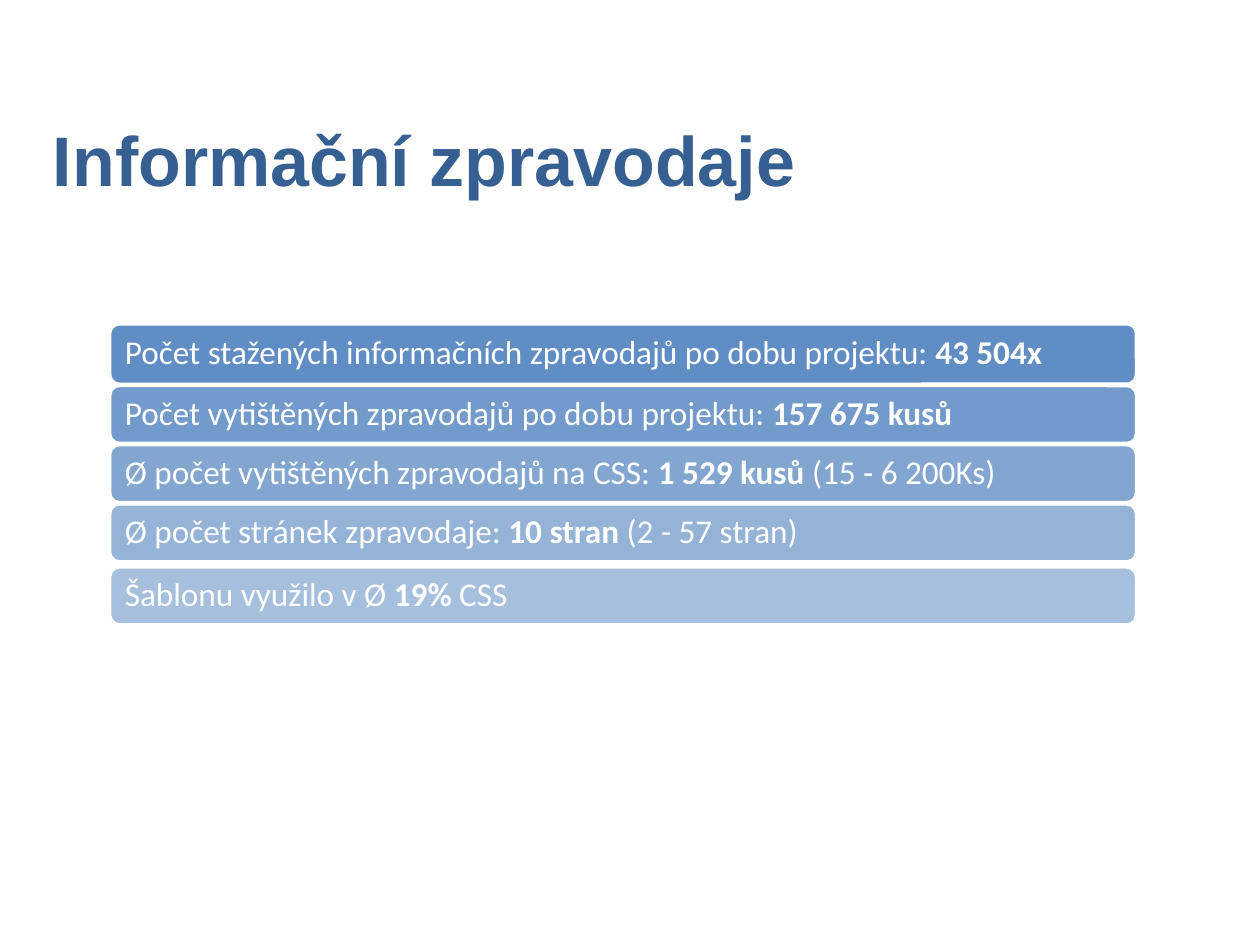
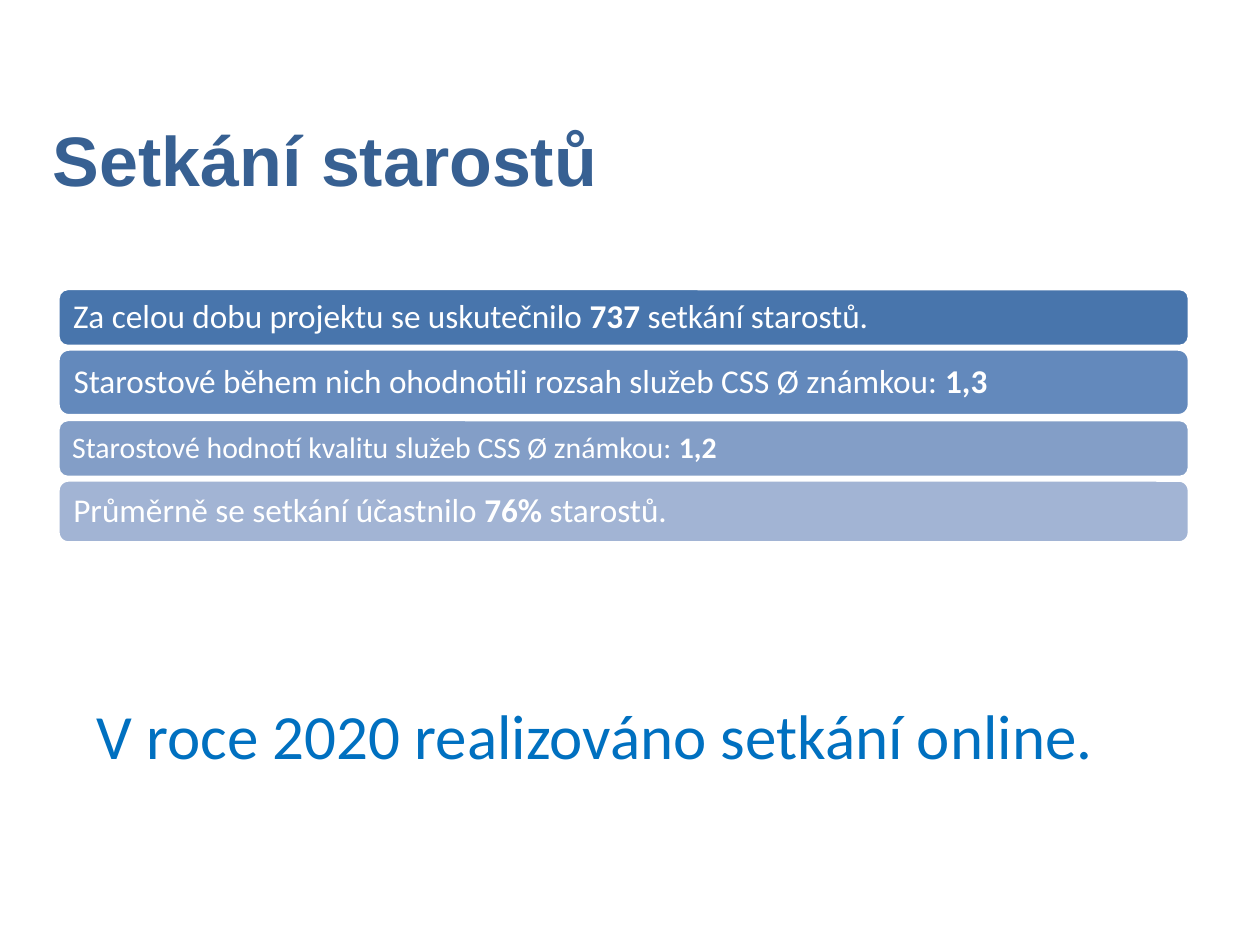
from lxml.etree import SubElement
from pptx import Presentation
from pptx.dml.color import RGBColor
from pptx.enum.shapes import MSO_SHAPE as Shape
from pptx.enum.text import MSO_ANCHOR as Anchor, MSO_AUTO_SIZE as AutoSize, PP_ALIGN as Align
from pptx.oxml.ns import qn
from pptx.util import Emu, Pt

EMU_PER_PX = 9144  # 100 px to the inch
TITLE_ONLY = 5

WHITE = RGBColor(0xFF, 0xFF, 0xFF)
TITLE_BLUE = RGBColor(0x37, 0x60, 0x92)
NOTE_BLUE = RGBColor(0x00, 0x70, 0xC0)
BAR_BLUE = RGBColor(0x4F, 0x81, 0xBD)
MEETING_BLUES = [
    RGBColor(0x48, 0x75, 0xAC),
    RGBColor(0x63, 0x89, 0xBC),
    RGBColor(0x83, 0x9E, 0xC7),
    RGBColor(0xA2, 0xB4, 0xD4),
]

# Each bar: top, height, font size, spans that alternate between regular and bold
NEWSLETTER_BARS = [
    (257, 48, 19, ["Počet stažených informačních zpravodajů po dobu projektu: ", "43 504x"]),
    (306, 46, 19, ["Počet vytištěných zpravodajů po dobu projektu: ", "157 675 kusů"]),
    (353, 46, 19, ["Ø počet vytištěných zpravodajů na CSS: ", "1 529 kusů ", "(15 - 6 200Ks)"]),
    (400, 46, 19, ["Ø počet stránek zpravodaje: ", "10 stran ", "(2 - 57 stran)"]),
    (450, 46, 19, ["Šablonu využilo v Ø ", "19% ", "CSS"]),
]
MEETING_BARS = [
    (229, 46, 19, ["Za celou dobu projektu se uskutečnilo ", "737", " setkání starostů."]),
    (277, 53, 19, ["Starostové během nich ohodnotili rozsah služeb CSS Ø známkou: ", "1,3"]),
    (333, 46, 17, ["Starostové hodnotí kvalitu služeb CSS Ø známkou: ", "1,2"]),
    (381, 50, 19, ["Průměrně se setkání účastnilo ", "76%", " starostů."]),
]


def px(length):
    return Emu(length * EMU_PER_PX)


def set_font(paragraph, name, size, color, bold=None):
    font = paragraph.font
    font.name, font.size, font.bold = name, Pt(size), bold
    font.color.rgb = color


def add_titled_slide(deck, text):
    slide = deck.slides.add_slide(deck.slide_layouts[TITLE_ONLY])
    title = slide.shapes.title
    title.left, title.top, title.width, title.height = map(px, (32, 90, 924, 71))
    frame = title.text_frame
    frame.text = text
    frame.auto_size = AutoSize.NONE
    frame.vertical_anchor = Anchor.MIDDLE
    paragraph = frame.paragraphs[0]
    paragraph.alignment = Align.LEFT
    set_font(paragraph, "Arial", 40, TITLE_BLUE, bold=True)
    return slide


def set_opacity(shape, percent):
    color = shape.fill._xPr.find(qn("a:solidFill"))[0]
    SubElement(color, qn("a:alpha"), val=str(percent * 1000))


def add_bar(slide, left, width, bar, color, opacity=100):
    top, height, size, spans = bar
    shape = slide.shapes.add_shape(Shape.ROUNDED_RECTANGLE, *map(px, (left, top, width, height)))
    shape.shadow.inherit = False
    shape.fill.solid()
    shape.fill.fore_color.rgb = color
    if opacity < 100:
        set_opacity(shape, opacity)
    shape.line.color.rgb = WHITE
    shape.line.width = Pt(2)

    frame = shape.text_frame
    frame.word_wrap = True
    frame.vertical_anchor = Anchor.MIDDLE
    # The text keeps clear of the rounded corners by about half its size
    frame.margin_left = frame.margin_right = px(size // 2 + 1)
    frame.margin_top = frame.margin_bottom = 0
    paragraph = frame.paragraphs[0]
    paragraph.alignment = Align.LEFT
    paragraph.line_spacing = 0.9
    set_font(paragraph, "Calibri", size, WHITE)
    for index, text in enumerate(spans):
        span = paragraph.add_run()
        span.text = text
        span.font.bold = index % 2 == 1


def add_note(slide, text):
    box = slide.shapes.add_textbox(*map(px, (67, 548, 883, 71)))
    frame = box.text_frame
    frame.word_wrap = True
    frame.text = text
    set_font(frame.paragraphs[0], "Calibri", 36, NOTE_BLUE)


def main():
    deck = Presentation()
    deck.slide_width, deck.slide_height = px(1000), px(750)

    newsletters = add_titled_slide(deck, "Informační zpravodaje")
    for index, bar in enumerate(NEWSLETTER_BARS):
        add_bar(newsletters, 87, 815, bar, BAR_BLUE, opacity=90 - 10 * index)

    meetings = add_titled_slide(deck, "Setkání starostů")
    for bar, color in zip(MEETING_BARS, MEETING_BLUES):
        add_bar(meetings, 46, 898, bar, color)
    add_note(meetings, "V roce 2020 realizováno setkání online.")

    deck.save("out.pptx")


if __name__ == "__main__":
    main()
